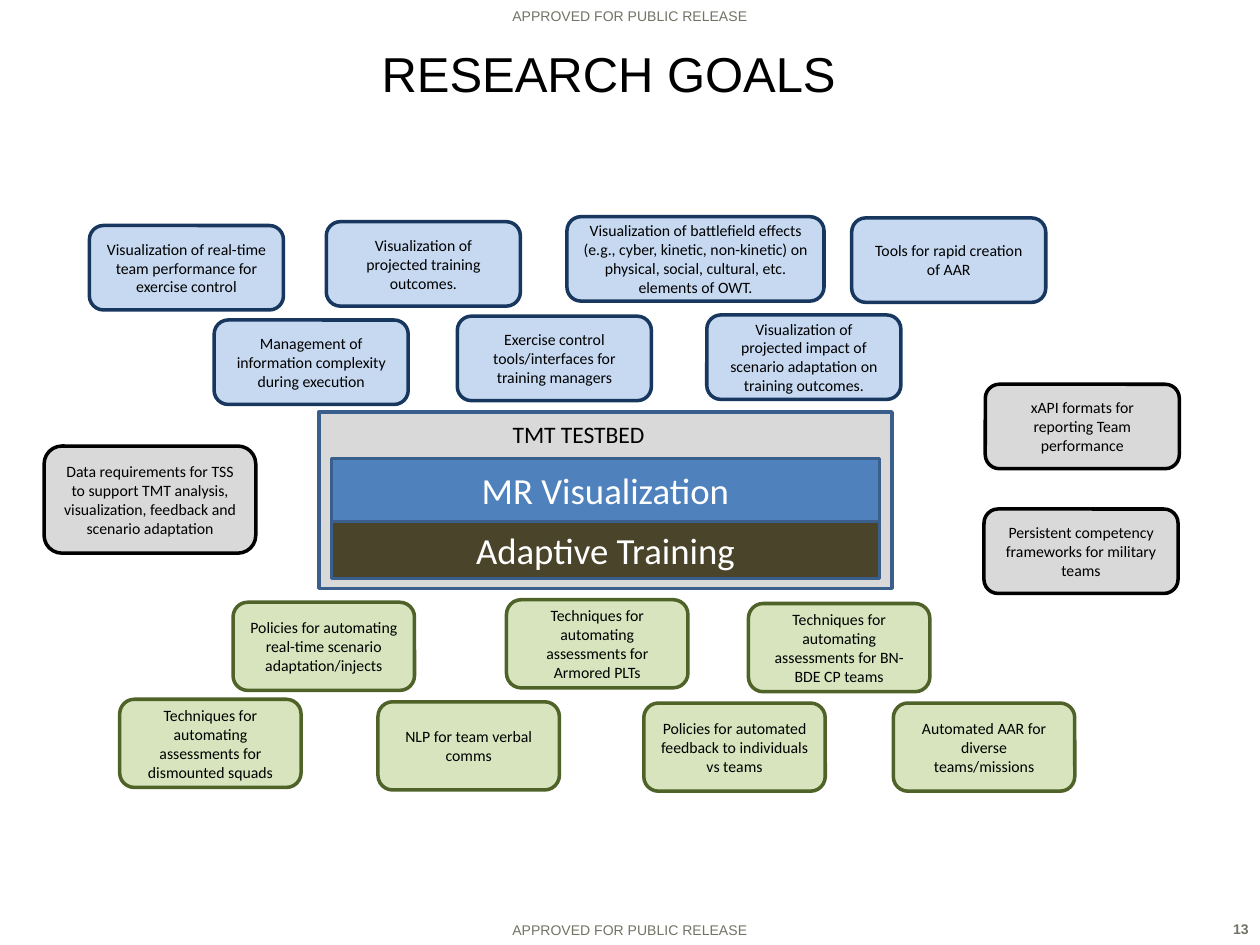
from pptx import Presentation
from pptx.dml.color import RGBColor
from pptx.enum.shapes import MSO_SHAPE
from pptx.enum.text import MSO_ANCHOR, PP_ALIGN
from pptx.util import Inches, Pt

BLUE, GREEN, GREY = ("C6D9F1", "17375E"), ("D7E4BD", "4F6228"), ("D9D9D9", "000000")
BORDER = "3A5F8C"
MARKING = "APPROVED FOR PUBLIC RELEASE"

VISUALIZATION_GOALS = [
    (0, 0.07, 1.54, "Visualization of real-time team performance for exercise control"),
    (1.88, 0.04, 1.54, "Visualization of projected training outcomes."),
    (3.79, 0, 2.04, "Visualization of battlefield effects (e.g., cyber, kinetic, "
     "non-kinetic) on physical, social, cultural, etc. elements of OWT."),
    (6.05, 0.01, 1.54, "Tools for rapid creation of AAR"),
    (0.99, 0.82, 1.54, "Management of information complexity during execution"),
    (2.92, 0.79, 1.54, "Exercise control tools/interfaces for training managers"),
    (4.9, 0.78, 1.54, "Visualization of projected impact of scenario adaptation "
     "on training outcomes."),
]
TRAINING_GOALS = [
    (0.9, 0.02, 1.44, "Policies for automating real-time scenario adaptation/injects"),
    (3.07, 0, 1.44, "Techniques for automating assessments for Armored PLTs"),
    (4.99, 0.03, 1.44, "Techniques for automating assessments for BN-BDE CP teams"),
    (0, 0.79, 1.44, "Techniques for automating assessments for dismounted squads"),
    (2.05, 0.81, 1.44, "NLP for team verbal comms"),
    (4.16, 0.82, 1.44, "Policies for automated feedback to individuals vs teams"),
    (6.14, 0.82, 1.44, "Automated AAR for diverse teams/missions"),
]
DATA_GOALS = [
    (0, 0, 1.68, "Data requirements for TSS to support TMT analysis, visualization, "
     "feedback and scenario adaptation"),
]
STANDARDS_GOALS = [
    (0.01, 0, 1.54, "xAPI formats for reporting Team performance"),
    (0, 0.99, 1.54, "Persistent competency frameworks for military teams"),
]


def rgb(value):
    """Turn a hex string into a colour."""
    return RGBColor.from_string(value)


def write(sp, text, size, color, font="Calibri", align=PP_ALIGN.CENTER,
          anchor=MSO_ANCHOR.MIDDLE, wrap=True, bold=False):
    """Put one formatted paragraph into a shape."""
    tf = sp.text_frame
    tf.word_wrap = wrap
    tf.vertical_anchor = anchor
    p = tf.paragraphs[0]
    p.text = text
    p.alignment = align
    p.font.name, p.font.size, p.font.bold = font, Pt(size), bold
    p.font.color.rgb = rgb(color)


def add_box(shapes, kind, x, y, w, h, fill, line):
    """Add a filled and outlined shape without a shadow."""
    sp = shapes.add_shape(kind, Inches(x), Inches(y), Inches(w), Inches(h))
    sp.shadow.inherit = False
    sp.fill.solid()
    sp.fill.fore_color.rgb = rgb(fill)
    sp.line.color.rgb = rgb(line)
    sp.line.width = Pt(2)
    return sp


def add_label(shapes, x, y, w, h, text, size, color, **style):
    """Add a text box with one paragraph."""
    sp = shapes.add_textbox(Inches(x), Inches(y), Inches(w), Inches(h))
    write(sp, text, size, color, **style)


def add_title(s, x, y, w, h):
    """Place and format the title placeholder."""
    sp = s.shapes.title
    sp.left, sp.top, sp.width, sp.height = map(Inches, (x, y, w, h))
    write(sp, "RESEARCH GOALS", 28, "000000", font="Arial")


def add_margins(s, w, h):
    """Add the release markings and the page number."""
    style = {"size": 8, "color": "717365", "font": "Arial"}
    band = 0.24
    add_label(s.shapes, 1.5, h - band, w - 3, band, MARKING,
              anchor=MSO_ANCHOR.BOTTOM, **style)
    add_label(s.shapes, 0, 0, w, band, MARKING, anchor=MSO_ANCHOR.BOTTOM, **style)
    add_label(s.shapes, w - 0.45, h - band, 0.46, band, "13", bold=True,
              align=PP_ALIGN.RIGHT, anchor=MSO_ANCHOR.TOP, **style)


def add_goals(s, x, y, height, colors, goals):
    """Add a cluster of goal cards, offset from its top left corner."""
    for dx, dy, width, text in goals:
        sp = add_box(s.shapes, MSO_SHAPE.ROUNDED_RECTANGLE,
                     x + dx, y + dy, width, height, *colors)
        write(sp, text, 9, "000000")


def add_testbed(s, x, y, w, h):
    """Add the grouped testbed panel with its two layers."""
    shapes = s.shapes.add_group_shape().shapes
    add_box(shapes, MSO_SHAPE.RECTANGLE, x, y, w, h, "D9D9D9", BORDER)
    for dy, height, fill, text in ((0.87, 0.45, "4A452A", "Adaptive Training"),
                                   (0.37, 0.5, "4F81BD", "MR Visualization")):
        sp = add_box(shapes, MSO_SHAPE.RECTANGLE, x + 0.1, y + dy, w - 0.2, height,
                     fill, BORDER)
        write(sp, text, 21, "FFFFFF")
    add_label(shapes, x + 1.44, y + 0.01, 1.27, 0.33, "TMT TESTBED", 13.5, "000000",
              align=PP_ALIGN.LEFT, anchor=MSO_ANCHOR.TOP, wrap=False)


def main():
    """Build and save the slide."""
    prs = Presentation()
    prs.slide_width, prs.slide_height = Inches(10), Inches(7.5)
    s = prs.slides.add_slide(prs.slide_layouts[5])
    add_margins(s, 10, 7.5)
    add_title(s, 1.58, 0.3, 6.5, 0.55)
    add_testbed(s, 2.53, 3.27, 4.55, 1.4)
    add_goals(s, 0.71, 1.72, 0.67, BLUE, VISUALIZATION_GOALS)
    add_goals(s, 0.95, 4.76, 0.7, GREEN, TRAINING_GOALS)
    add_goals(s, 0.35, 3.54, 0.85, GREY, DATA_GOALS)
    add_goals(s, 7.81, 3.05, 0.67, GREY, STANDARDS_GOALS)
    prs.save("out.pptx")


if __name__ == "__main__":
    main()
